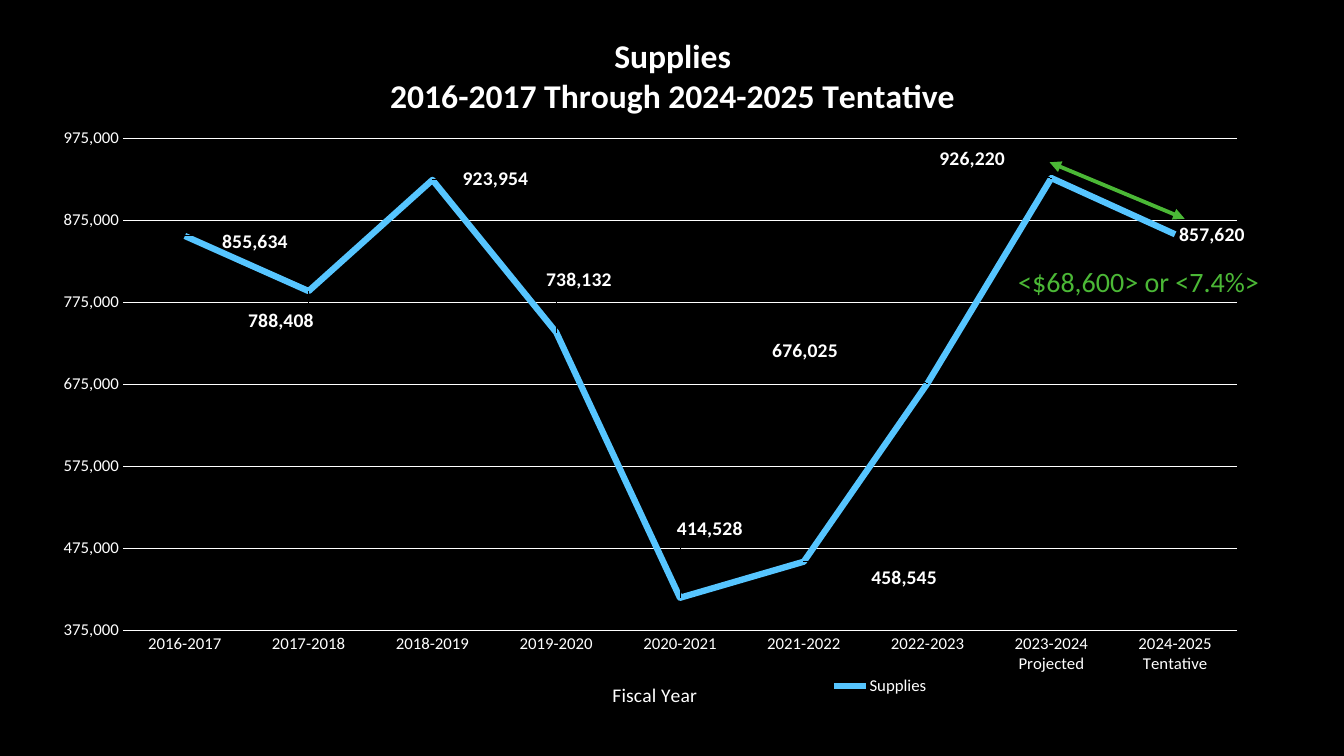
"""Build the Supplies trend slide with its line chart and change callout."""
from dataclasses import dataclass

from lxml import etree
from pptx import Presentation
from pptx.chart.data import CategoryChartData
from pptx.dml.color import RGBColor
from pptx.enum.chart import (XL_CHART_TYPE, XL_LABEL_POSITION, XL_LEGEND_POSITION,
                             XL_MARKER_STYLE, XL_TICK_MARK)
from pptx.enum.shapes import MSO_CONNECTOR
from pptx.enum.text import MSO_AUTO_SIZE
from pptx.oxml.ns import qn
from pptx.util import Inches, Pt

LINE_CHART = XL_CHART_TYPE.LINE
LABEL_RIGHT = XL_LABEL_POSITION.RIGHT
LEGEND_BOTTOM = XL_LEGEND_POSITION.BOTTOM
NO_MARKER = XL_MARKER_STYLE.NONE
NO_TICK = XL_TICK_MARK.NONE
STRAIGHT = MSO_CONNECTOR.STRAIGHT
GROW = MSO_AUTO_SIZE.SHAPE_TO_FIT_TEXT


@dataclass(frozen=True)
class Theme:
    """Colours, font and type sizes of the slide."""
    font: str = "Calibri"
    background: RGBColor = RGBColor(0, 0, 0)
    text: RGBColor = RGBColor(255, 255, 255)
    series: RGBColor = RGBColor(0x56, 0xC5, 0xFF)
    change: RGBColor = RGBColor(0x4B, 0xB8, 0x36)
    title_size: int = 24
    callout_size: int = 20
    label_size: int = 14
    axis_size: int = 12


THEME = Theme()
NUMBER_FORMAT = "#,##0"
SUPPLIES = {
    "2016-2017": 855634,
    "2017-2018": 788408,
    "2018-2019": 923954,
    "2019-2020": 738132,
    "2020-2021": 414528,
    "2021-2022": 458545,
    "2022-2023": 676025,
    "2023-2024 Projected": 926220,
    "2024-2025 Tentative": 857620,
}
LABEL_SHIFTS_INCHES = [(0.33, 0.06), (-0.64, 0.3), (0.26, -0.01), (-0.14, -0.53),
                       (-0.07, -0.69), (0.63, 0.16), (-1.58, -0.33), (-1.15, -0.19)]
CHART_WIDTH, CHART_HEIGHT = 12.98, 7


def style_font(font, size, color=THEME.text, bold=False):
    """Apply the theme typeface with a size, colour and weight."""
    font.name = THEME.font
    font.size = Pt(size)
    font.color.rgb = color
    font.bold = bold


def style_line(line, color, width):
    """Give a line its colour and width in points."""
    line.color.rgb = color
    line.width = Pt(width)


def place(element, index, x, y, w=None, h=None, **modes):
    """Lay out a chart element by hand, with lengths in inches within the chart."""
    for old_layout in element.findall(qn("c:layout")):
        element.remove(old_layout)
    layout = etree.Element(qn("c:layout"))
    manual = etree.SubElement(layout, qn("c:manualLayout"))
    for name, mode in modes.items():
        etree.SubElement(manual, qn(f"c:{name}"), val=mode)
    lengths = (("x", x, CHART_WIDTH), ("y", y, CHART_HEIGHT),
               ("w", w, CHART_WIDTH), ("h", h, CHART_HEIGHT))
    for name, length, whole in lengths:
        if length is not None:
            etree.SubElement(manual, qn(f"c:{name}"), val=str(length / whole))
    element.insert(index, layout)


def write_title(title, lines, size, bold, x, y):
    """Write a chart or axis title and place its top left corner."""
    frame = title.text_frame
    frame.text = "\n".join(lines)
    for para in frame.paragraphs:
        style_font(para.runs[0].font, size, bold=bold)
    place(title.element, 1, x, y, xMode="edge", yMode="edge")


def style_axes(chart):
    """Format the fiscal year axis and the value axis."""
    years, values = chart.category_axis, chart.value_axis
    for axis in (years, values):
        axis.major_tick_mark = axis.minor_tick_mark = NO_TICK
        style_font(axis.tick_labels.font, THEME.axis_size)
    style_line(years.format.line, THEME.text, 0.75)
    write_title(years.axis_title, ["Fiscal Year"], THEME.label_size, False, 5.88, 6.73)
    values.format.line.fill.background()
    values.minimum_scale, values.maximum_scale = 375000, 1000000
    values.major_unit = 100000
    values.tick_labels.number_format = NUMBER_FORMAT
    values.tick_labels.number_format_is_linked = False
    style_line(values.major_gridlines.format.line, THEME.text, 0.75)


def style_series(chart):
    """Format the supplies line and shift its value labels."""
    series = chart.plots[0].series[0]
    series.smooth = False
    series.marker.style = NO_MARKER
    style_line(series.format.line, THEME.series, 4.5)
    labels = series.data_labels
    labels.show_value = True
    labels.number_format = NUMBER_FORMAT
    labels.number_format_is_linked = False
    labels.position = LABEL_RIGHT
    style_font(labels.font, THEME.label_size, bold=True)
    for index, (right, down) in enumerate(LABEL_SHIFTS_INCHES):
        label = series.points[index].data_label
        style_font(label.font, THEME.label_size, bold=True)
        label.position = LABEL_RIGHT
        element = chart.element.xpath(f".//c:dLbl[c:idx/@val='{index}']")[0]
        place(element, 1, right, down)


def style_legend(chart):
    """Add the legend beside the axis title."""
    chart.has_legend = True
    chart.legend.position = LEGEND_BOTTOM
    chart.legend.include_in_layout = False
    style_font(chart.legend.font, THEME.axis_size)
    place(chart.element.xpath(".//c:legend")[0], 1, 8.05, 6.67, 1.04, 0.28,
          xMode="edge", yMode="edge")


def add_supplies_chart(page):
    """Add the line chart of supplies by fiscal year."""
    data = CategoryChartData(number_format=NUMBER_FORMAT)
    data.categories = list(SUPPLIES)
    data.add_series("Supplies", list(SUPPLIES.values()))
    chart = page.shapes.add_chart(LINE_CHART, Inches(0.16), Inches(0.08), Inches(CHART_WIDTH),
                                  Inches(CHART_HEIGHT), data).chart
    style_font(chart.font, THEME.axis_size)
    chart.plots[0].vary_by_categories = False
    write_title(chart.chart_title, ["Supplies", "2016-2017 Through 2024-2025 Tentative"],
                THEME.title_size, True, 3.68, 0.24)
    style_axes(chart)
    style_series(chart)
    style_legend(chart)
    place(chart.element.xpath(".//c:plotArea")[0], 0, 1.06, 1.1, 11.05, 5.15,
          layoutTarget="inner", xMode="edge", yMode="edge")


def add_change_arrow(page):
    """Add the double-headed arrow over the last two years."""
    arrow = page.shapes.add_connector(STRAIGHT, Inches(10.41), Inches(1.61),
                                      Inches(11.75), Inches(2.17))
    style_line(arrow.line, THEME.change, 2.75)
    outline = arrow.element.xpath(".//a:ln")[0]
    for end in ("a:headEnd", "a:tailEnd"):
        etree.SubElement(outline, qn(end), type="triangle")
    etree.SubElement(arrow.element.spPr, qn("a:effectLst"))


def add_change_callout(page):
    """Add the text naming the change between the last two years."""
    box = page.shapes.add_textbox(Inches(10), Inches(2.58), Inches(2.61), Inches(0.44))
    frame = box.text_frame
    frame.word_wrap = False
    frame.auto_size = GROW
    frame.text = "<$68,600> or <7.4%>"
    style_font(frame.paragraphs[0].runs[0].font, THEME.callout_size, THEME.change)


def main():
    """Build and save the deck."""
    deck = Presentation()
    deck.slide_width, deck.slide_height = Inches(13.33), Inches(7.5)
    page = deck.slides.add_slide(deck.slide_layouts[6])
    page.background.fill.solid()
    page.background.fill.fore_color.rgb = THEME.background
    add_supplies_chart(page)
    add_change_arrow(page)
    add_change_callout(page)
    deck.save("out.pptx")


if __name__ == "__main__":
    main()
